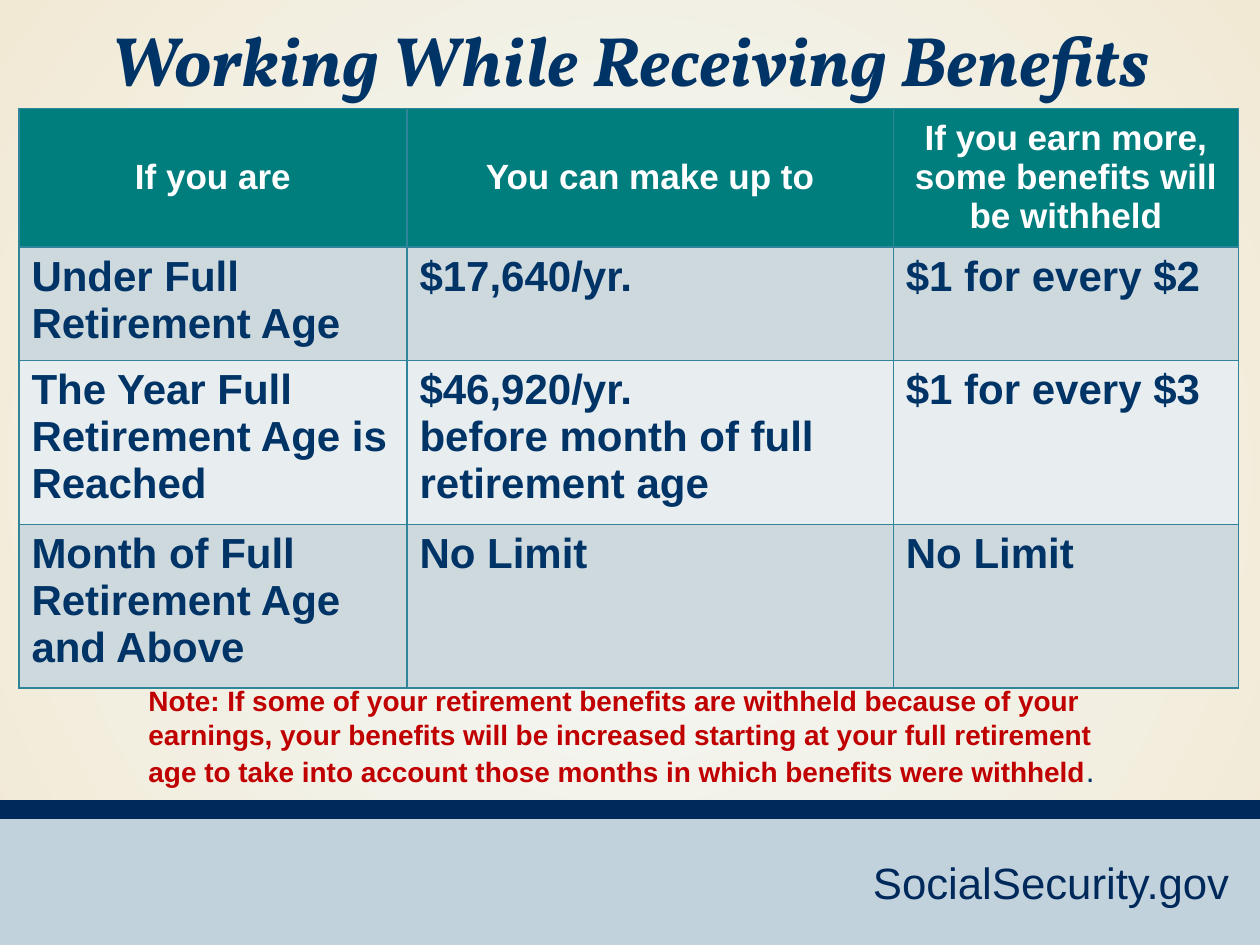
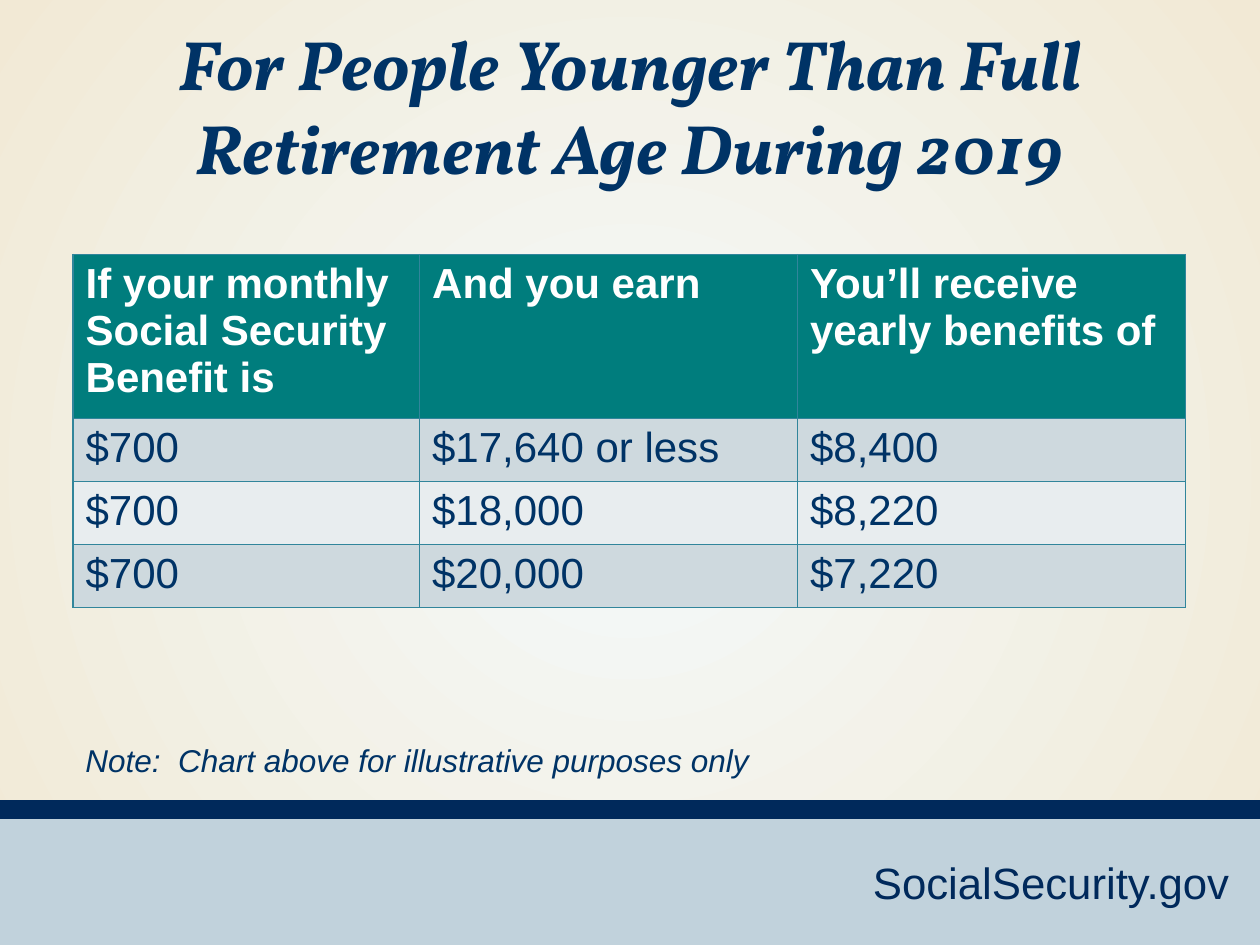
from pptx import Presentation
from pptx.dml.color import RGBColor
from pptx.enum import shapes, text
from pptx.oxml import parse_xml
from pptx.oxml.ns import nsdecls, qn
from pptx.util import Inches, Pt

NAVY, BAND, PALE = "003366", "00295B", "C1D2DC"
TEAL, WHITE, RED, EDGE = "007D7D", "FFFFFF", "C00000", "31859B"
STRIPES = ["CED9DE", "E8EDEF"]
GLOW = ["F3FAFB", "F2E9D5"]
LEFT, CENTER = text.PP_ALIGN.LEFT, text.PP_ALIGN.CENTER

BODY = {"size": 24, "hue": NAVY}
HEAD = {"size": 24, "hue": WHITE, "bold": True}
TITLE = {"size": 40, "hue": NAVY, "bold": True, "italic": True, "font": "Vollkorn"}
SITE = ("SocialSecurity.gov", {"size": 25, "hue": BAND})

PAGES = [
    {
        "title": "Working While Receiving Benefits",
        "title_at": (0, 0.08, 10, 0.77),
        "table_at": (0.15, 0.86),
        "cols": [3.08, 3.86, 2.74],
        "rows": [1.1, 0.9, 1.3, 1.3],
        "head": {**HEAD, "size": 20},
        "body": {**BODY, "bold": True},
        "mid": True,
        "cells": [
            ["If you are", "You can make up to",
             "If you earn more, some benefits will be withheld"],
            ["Under Full Retirement Age", "$17,640/yr.", "$1 for every $2"],
            ["The Year Full Retirement Age is Reached",
             "$46,920/yr. \nbefore month of full retirement age", "$1 for every $3"],
            ["Month of Full Retirement Age \nand Above", "No Limit", "No Limit"],
        ],
        "note_at": (1.08, 5.38, 8.05, 0.94),
        "note": [
            ("Note: If some of your retirement benefits are withheld because of your "
             "earnings, your benefits will be increased starting at your full retirement "
             "age to take into account those months in which benefits were withheld",
             {"size": 16, "hue": RED, "bold": True}),
            (".", {"size": 18, "hue": NAVY}),
        ],
    },
    {
        "title": "For People Younger Than Full Retirement Age During 2019",
        "title_at": (0, 0.11, 10, 1.45),
        "table_at": (0.58, 2.02),
        "cols": [2.75, 3, 3.08],
        "rows": [1.3, 0.5, 0.5, 0.5],
        "head": HEAD,
        "body": BODY,
        "mid": False,
        "cells": [
            ["If your monthly Social Security Benefit is", "And you earn",
             "You’ll receive yearly benefits of"],
            ["$700", "$17,640 or less", "$8,400"],
            ["$700", "$18,000", "$8,220"],
            ["$700", "$20,000", "$7,220"],
        ],
        "note_at": (0.58, 5.83, 7.67, 0.4),
        "note": [("Note:  Chart above for illustrative purposes only",
                  {"size": 18, "hue": NAVY, "italic": True})],
    },
]


def rgb(hue):
    return RGBColor.from_string(hue)


def write(frame, runs, align=LEFT):
    """Fill the first paragraph with runs; a newline becomes a line break."""
    para = frame.paragraphs[0]
    para.alignment = align
    for words, look in runs:
        for i, line in enumerate(words.split("\n")):
            if i:
                para.add_line_break()
            run = para.add_run()
            run.text = line
            font = run.font
            font.name = look.get("font", "Arial")
            font.size = Pt(look["size"])
            font.bold = look.get("bold", False)
            font.italic = look.get("italic", False)
            font.color.rgb = rgb(look["hue"])


def add_text(slide, at, runs, align=LEFT):
    frame = slide.shapes.add_textbox(*map(Inches, at)).text_frame
    frame.word_wrap = True
    frame.auto_size = text.MSO_AUTO_SIZE.SHAPE_TO_FIT_TEXT
    write(frame, runs, align)


def add_band(slide, top, high, hue):
    band = slide.shapes.add_shape(shapes.MSO_SHAPE.RECTANGLE, 0, Inches(top),
                                  Inches(10), Inches(high))
    band.shadow.inherit = False
    band.fill.solid()
    band.fill.fore_color.rgb = rgb(hue)
    band.line.fill.background()


def add_edges(cell):
    props = cell._tc.get_or_add_tcPr()
    for side in "LRTB":
        props.append(parse_xml(
            f'<a:ln{side} {nsdecls("a")} w="12700"><a:solidFill>'
            f'<a:srgbClr val="{EDGE}"/></a:solidFill></a:ln{side}>'))


def add_grid(slide, page):
    cols, rows = page["cols"], page["rows"]
    size = sum(cols), sum(rows)
    grid = slide.shapes.add_table(len(rows), len(cols),
                                  *map(Inches, page["table_at"] + size)).table
    for col, wide in zip(grid.columns, cols):
        col.width = Inches(wide)
    for r, (row, high) in enumerate(zip(grid.rows, rows)):
        row.height = Inches(high)
        mid = page["mid"] and r == 0
        for cell, words in zip(row.cells, page["cells"][r]):
            add_edges(cell)
            cell.fill.solid()
            cell.fill.fore_color.rgb = rgb(STRIPES[(r - 1) % 2] if r else TEAL)
            if mid:
                cell.vertical_anchor = text.MSO_ANCHOR.MIDDLE
            look = page["body"] if r else page["head"]
            write(cell.text_frame, [(words, look)], CENTER if mid else LEFT)


def set_glow(master):
    """Give every slide a round gradient that is lightest in the middle."""
    fill = master.background.fill
    fill.gradient()
    for stop, hue, place in zip(fill.gradient_stops, GLOW, (0, 1)):
        stop.color.rgb = rgb(hue)
        stop.position = place
    grad = master.element.find(".//" + qn("a:gradFill"))
    grad.remove(grad.find(qn("a:lin")))
    grad.append(parse_xml(
        f'<a:path {nsdecls("a")} path="circle">'
        '<a:fillToRect l="50000" t="50000" r="50000" b="50000"/></a:path>'))


def main():
    deck = Presentation()
    deck.slide_width, deck.slide_height = Inches(10), Inches(7.5)
    set_glow(deck.slide_master)
    for page in PAGES:
        slide = deck.slides.add_slide(deck.slide_layouts[6])
        add_band(slide, 6.45, 1.05, PALE)
        add_band(slide, 6.35, 0.15, BAND)
        add_text(slide, (6.83, 6.74, 3.07, 0.52), [SITE])
        add_grid(slide, page)
        add_text(slide, page["note_at"], page["note"])
        add_text(slide, page["title_at"], [(page["title"], TITLE)], CENTER)
    deck.save("out.pptx")


if __name__ == "__main__":
    main()
